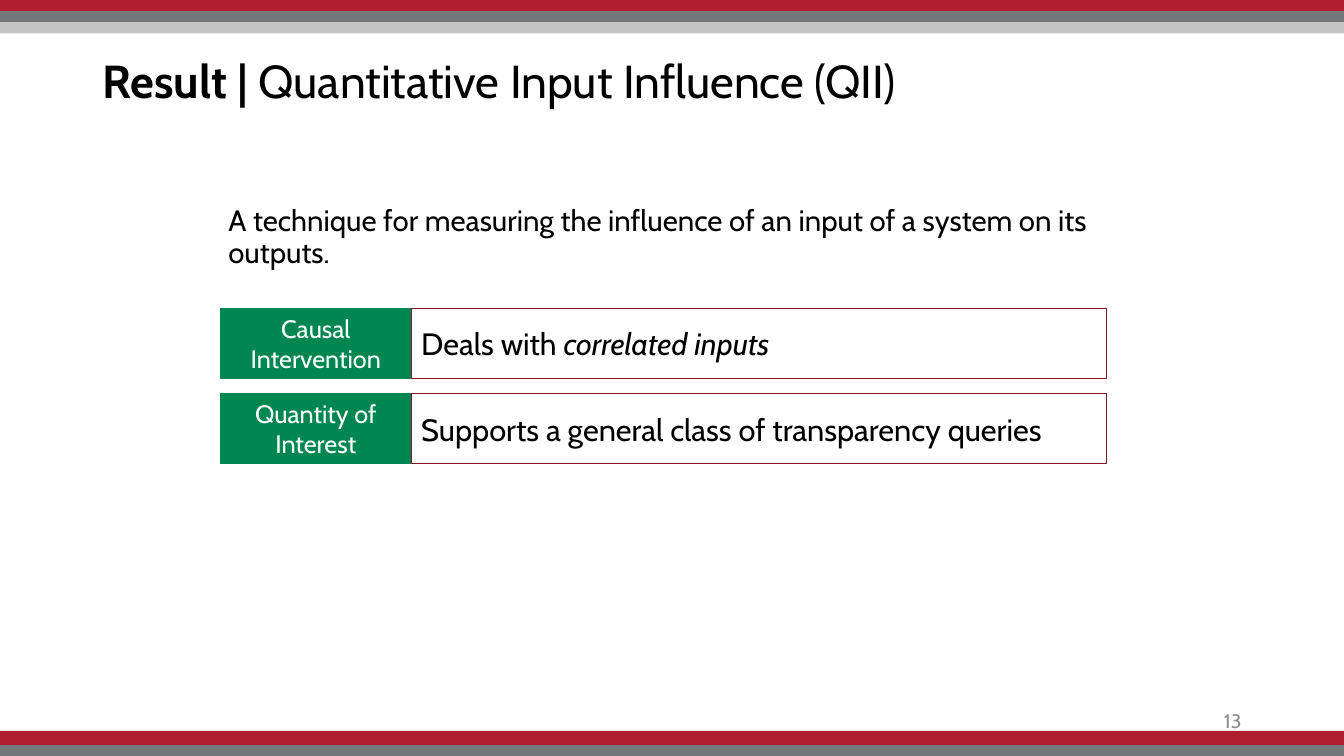
"""Build the slide that presents Quantitative Input Influence."""
from dataclasses import dataclass

from pptx import Presentation
from pptx.dml.color import RGBColor
from pptx.enum.shapes import MSO_SHAPE
from pptx.enum.text import MSO_ANCHOR, PP_ALIGN
from pptx.shapes.autoshape import Shape
from pptx.slide import Slide
from pptx.util import Pt

RECTANGLE = MSO_SHAPE.RECTANGLE
TOP, MIDDLE = MSO_ANCHOR.TOP, MSO_ANCHOR.MIDDLE
LEFT, CENTER, RIGHT = PP_ALIGN.LEFT, PP_ALIGN.CENTER, PP_ALIGN.RIGHT

FONT = "Cabin"
BLACK, WHITE = "000000", "FFFFFF"
RED, DARK_GRAY, LIGHT_GRAY = "AF1E2D", "75787B", "C5C5C5"
GREEN, DARK_RED, NUMBER_GRAY = "008751", "811621", "8C8C8C"

SLIDE_WIDTH, SLIDE_HEIGHT = 960, 540
ROW_LEFT, ROW_TOP, ROW_HEIGHT, ROW_PITCH = 157.4, 220.3, 49.9, 61
TERM_WIDTH, BENEFIT_WIDTH = 136.4, 496.8


@dataclass
class Box:
    left: float
    top: float
    width: float
    height: float


@dataclass
class Phrase:
    text: str
    bold: bool = False
    italic: bool = False


@dataclass
class Stripe:
    top: float
    height: float
    color: str


@dataclass
class Feature:
    term: str
    benefit: list[Phrase]


STRIPES = [
    Stripe(0, 8, RED),
    Stripe(8, 8, DARK_GRAY),
    Stripe(16, 8, LIGHT_GRAY),
    Stripe(522, 10.5, RED),
    Stripe(532.2, 7.8, DARK_GRAY),
]
FEATURES = [
    Feature("Causal Intervention",
            [Phrase("Deals with "), Phrase("correlated inputs", italic=True)]),
    Feature("Quantity of Interest",
            [Phrase("Supports a general class of transparency queries")]),
]


def rgb(color: str) -> RGBColor:
    return RGBColor.from_string(color)


def write(holder: Shape, phrases: list[Phrase], size: float, color: str,
          align: PP_ALIGN = LEFT, anchor: MSO_ANCHOR = MIDDLE,
          line_spacing: float = 1.0) -> None:
    frame = holder.text_frame
    frame.word_wrap = True
    frame.vertical_anchor = anchor
    paragraph = frame.paragraphs[0]
    paragraph.alignment = align
    paragraph.line_spacing = line_spacing
    for phrase in phrases:
        run = paragraph.add_run()
        run.text = phrase.text
        run.font.name = FONT
        run.font.size = Pt(size)
        run.font.bold = phrase.bold
        run.font.italic = phrase.italic
        run.font.color.rgb = rgb(color)


def add_text(slide: Slide, box: Box) -> Shape:
    return slide.shapes.add_textbox(
        Pt(box.left), Pt(box.top), Pt(box.width), Pt(box.height))


def add_rectangle(slide: Slide, box: Box, fill: str, line: str = "") -> Shape:
    rectangle = slide.shapes.add_shape(
        RECTANGLE, Pt(box.left), Pt(box.top), Pt(box.width), Pt(box.height))
    rectangle.shadow.inherit = False
    rectangle.fill.solid()
    rectangle.fill.fore_color.rgb = rgb(fill)
    if line:
        rectangle.line.color.rgb = rgb(line)
        rectangle.line.width = Pt(1)
    else:
        rectangle.line.fill.background()
    return rectangle


def add_feature(slide: Slide, feature: Feature, top: float) -> None:
    term = add_rectangle(
        slide, Box(ROW_LEFT, top, TERM_WIDTH, ROW_HEIGHT), GREEN, GREEN)
    write(term, [Phrase(feature.term)], 18, WHITE, CENTER)
    benefit = add_rectangle(
        slide, Box(ROW_LEFT + TERM_WIDTH, top, BENEFIT_WIDTH, ROW_HEIGHT),
        WHITE, DARK_RED)
    write(benefit, feature.benefit, 22, BLACK)


def main() -> None:
    deck = Presentation()
    deck.slide_width, deck.slide_height = Pt(SLIDE_WIDTH), Pt(SLIDE_HEIGHT)
    slide = deck.slides.add_slide(deck.slide_layouts[6])

    for stripe in STRIPES:
        add_rectangle(
            slide, Box(0, stripe.top, SLIDE_WIDTH, stripe.height), stripe.color)

    title = add_text(slide, Box(66, 7.2, 828, 104.4))
    write(title, [Phrase("Result |", bold=True),
                  Phrase(" Quantitative Input Influence (QII)")],
          33, BLACK, line_spacing=0.9)
    page_number = add_text(slide, Box(678, 500.5, 216, 28.8))
    write(page_number, [Phrase("13")], 14, NUMBER_GRAY, RIGHT)
    definition = add_text(slide, Box(156, 144, 634.3, 342.7))
    write(definition,
          [Phrase("A technique for measuring the influence of an input "
                  "of a system on its outputs.")],
          21, BLACK, anchor=TOP, line_spacing=0.9)

    for index, feature in enumerate(FEATURES):
        add_feature(slide, feature, ROW_TOP + index * ROW_PITCH)

    deck.save("out.pptx")


if __name__ == "__main__":
    main()
